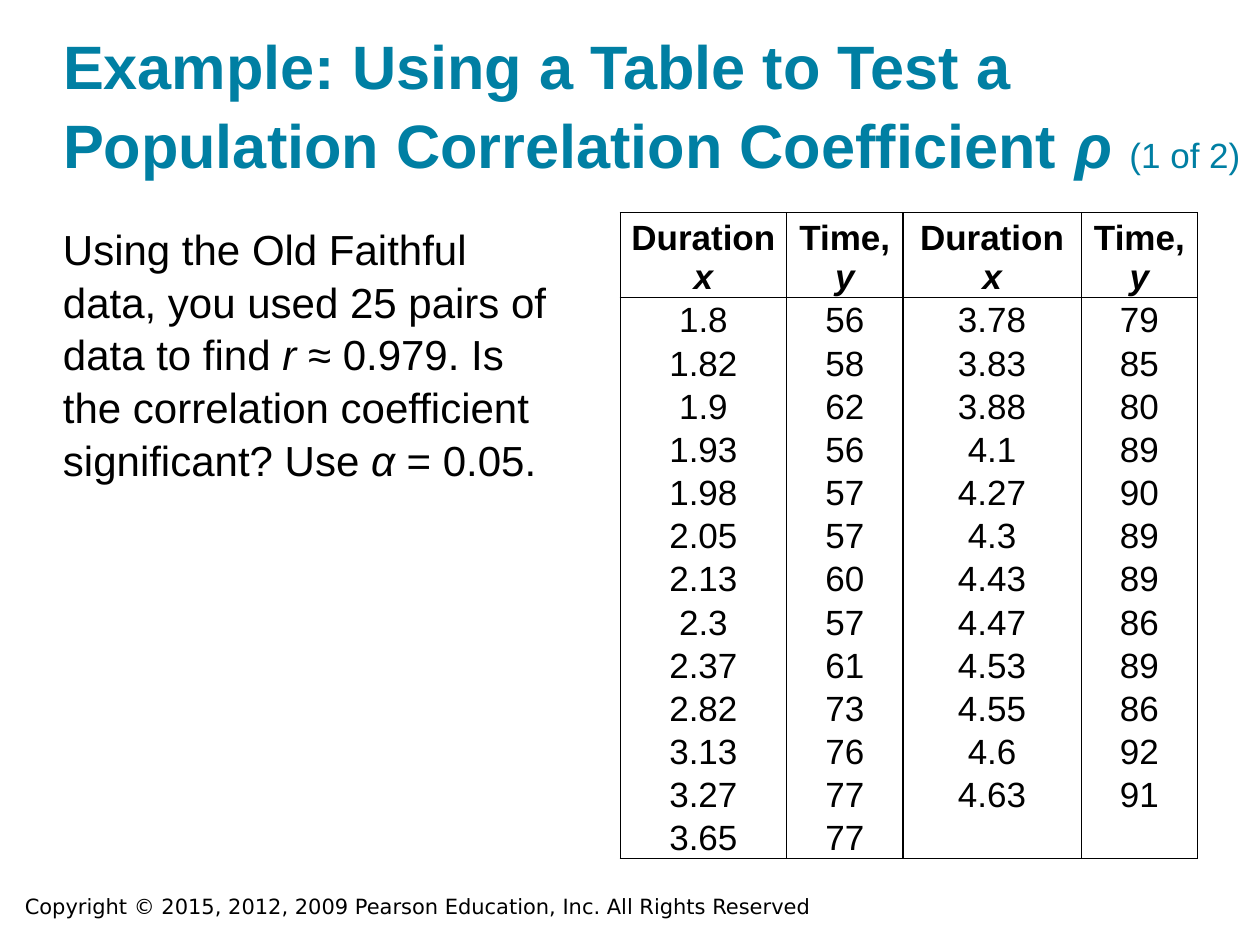
from lxml.etree import SubElement
from pptx import Presentation
from pptx.dml.color import RGBColor
from pptx.enum.text import MSO_ANCHOR, MSO_AUTO_SIZE, PP_ALIGN
from pptx.oxml.ns import qn
from pptx.util import Cm, Pt

TEAL = RGBColor(0x00, 0x7F, 0xA3)
BLACK = RGBColor(0x00, 0x00, 0x00)
WHITE = RGBColor(0xFF, 0xFF, 0xFF)

COLUMN_WIDTHS = [3.36, 2.34, 3.6, 2.34]
HEADER_HEIGHT, ROW_HEIGHT = 1.7, 0.87
HEADERS = [("Duration", "x"), ("Time,", "y")] * 2
ROWS = [
    ("1.8", "56", "3.78", "79"),
    ("1.82", "58", "3.83", "85"),
    ("1.9", "62", "3.88", "80"),
    ("1.93", "56", "4.1", "89"),
    ("1.98", "57", "4.27", "90"),
    ("2.05", "57", "4.3", "89"),
    ("2.13", "60", "4.43", "89"),
    ("2.3", "57", "4.47", "86"),
    ("2.37", "61", "4.53", "89"),
    ("2.82", "73", "4.55", "86"),
    ("3.13", "76", "4.6", "92"),
    ("3.27", "77", "4.63", "91"),
    ("3.65", "77", "", ""),
]


def add_span(para, text, size, color=BLACK, bold=False, italic=False, font="Arial"):
    span = para.add_run()
    span.text = text
    span.font.name = font
    span.font.size = Pt(size)
    span.font.color.rgb = color
    span.font.bold = bold
    span.font.italic = italic


def prepare_frame(shape, anchor, margin):
    frame = shape.text_frame
    frame.word_wrap = True
    frame.auto_size = MSO_AUTO_SIZE.NONE
    frame.vertical_anchor = anchor
    frame.margin_left = frame.margin_right = Cm(margin)
    frame.margin_top = frame.margin_bottom = Cm(margin)
    para = frame.paragraphs[0]
    para.alignment = PP_ALIGN.LEFT
    return para


def place_title(page, left, top, width, height):
    title = page.shapes.title
    title.left, title.top = Cm(left), Cm(top)
    title.width, title.height = Cm(width), Cm(height)
    para = prepare_frame(title, MSO_ANCHOR.BOTTOM, 0)
    para.line_spacing = 1.05
    add_span(para, "Example: Using a Table to Test a Population Correlation Coefficient ", 35, TEAL, True)
    add_span(para, "ρ", 35, TEAL, True, True)
    add_span(para, " ", 36, TEAL, True, True)
    add_span(para, "(1 of 2)", 20, TEAL)


def add_question(page, left, top, width, height):
    box = page.shapes.add_textbox(Cm(left), Cm(top), Cm(width), Cm(height))
    para = prepare_frame(box, MSO_ANCHOR.TOP, 0)
    para.line_spacing = 1.05
    add_span(para, "Using the Old Faithful data, you used 25 pairs of data to find ", 24)
    add_span(para, "r", 24, italic=True)
    add_span(para, " ≈ 0.979. Is the correlation coefficient significant? Use ", 24)
    add_span(para, "α", 24, italic=True)
    add_span(para, " = 0.05.", 24)


def set_borders(cell, widths):
    properties = cell._tc.get_or_add_tcPr()
    for side, width in widths.items():
        line = SubElement(properties, qn(f"a:ln{side}"), w=str(Pt(width)))
        if width:
            fill = SubElement(line, qn("a:solidFill"))
            SubElement(fill, qn("a:srgbClr"), val=str(BLACK))
        else:
            SubElement(line, qn("a:noFill"))


def prepare_cell(cell, row, column):
    set_borders(cell, {
        "L": 1 if column == 2 else 0.5,
        "R": 1 if column == 1 else 0.5,
        "T": 0.5 if row <= 1 else 0,
        "B": 0.5 if row in (0, len(ROWS)) else 0,
    })
    cell.fill.background()
    cell.vertical_anchor = MSO_ANCHOR.BOTTOM
    cell.margin_left = cell.margin_right = cell.margin_top = Cm(0.03)
    cell.margin_bottom = 0
    para = cell.text_frame.paragraphs[0]
    para.alignment = PP_ALIGN.CENTER
    return para


def add_data_table(page, left, top):
    width = sum(COLUMN_WIDTHS)
    height = HEADER_HEIGHT + ROW_HEIGHT * len(ROWS)
    table = page.shapes.add_table(
        len(ROWS) + 1, len(COLUMN_WIDTHS), Cm(left), Cm(top), Cm(width), Cm(height)
    ).table
    table.horz_banding = False
    for column, column_width in zip(table.columns, COLUMN_WIDTHS):
        column.width = Cm(column_width)
    for index, row in enumerate(table.rows):
        row.height = Cm(ROW_HEIGHT if index else HEADER_HEIGHT)

    for column, (label, symbol) in enumerate(HEADERS):
        cell = table.cell(0, column)
        para = prepare_cell(cell, 0, column)
        cell.fill.solid()
        cell.fill.fore_color.rgb = WHITE
        add_span(para, label, 20, bold=True)
        para.add_line_break()
        add_span(para, symbol, 20, bold=True, italic=True)

    for row, values in enumerate(ROWS, start=1):
        for column, value in enumerate(values):
            para = prepare_cell(table.cell(row, column), row, column)
            if value:
                add_span(para, value, 20)


def add_copyright(page, left, top, width, height):
    box = page.shapes.add_textbox(Cm(left), Cm(top), Cm(width), Cm(height))
    para = prepare_frame(box, MSO_ANCHOR.TOP, 0.13)
    box.text_frame.margin_left = box.text_frame.margin_right = Cm(0.25)
    add_span(para, "Copyright © 2015, 2012, 2009 Pearson Education, Inc. All Rights Reserved",
             12, font="DejaVu Sans")


def main():
    deck = Presentation()
    deck.slide_width, deck.slide_height = Cm(25.4), Cm(19.05)
    page = deck.slides.add_slide(deck.slide_layouts[5])
    place_title(page, 1.27, 0.61, 23.93, 3.05)
    add_question(page, 1.27, 4.45, 9.96, 5.08)
    add_data_table(page, 12.5, 4.29)
    add_copyright(page, 0.25, 17.88, 19.89, 0.76)
    deck.save("out.pptx")


if __name__ == "__main__":
    main()
